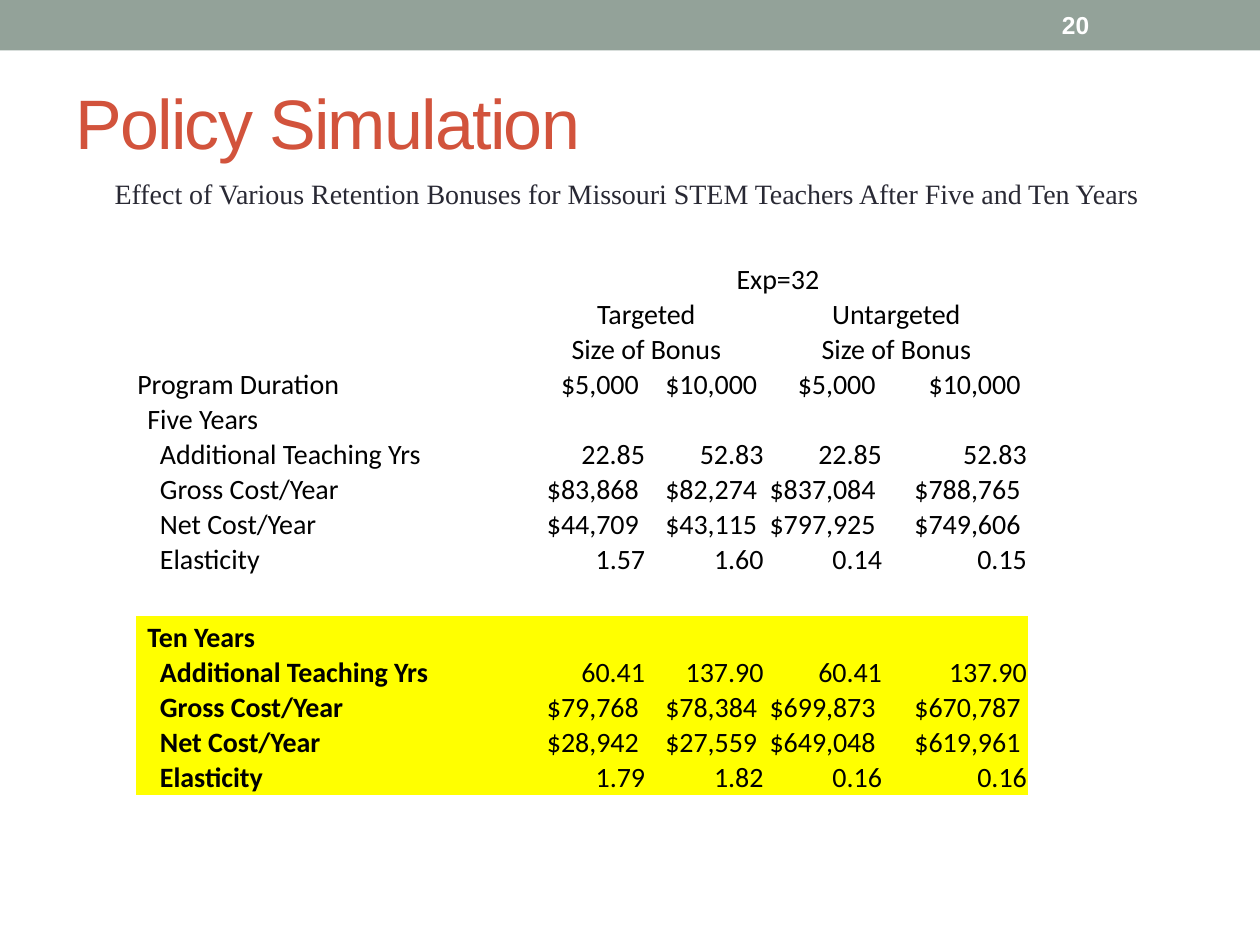
from pptx import Presentation
from pptx import util as u
from pptx.dml.color import RGBColor
from pptx.enum import shapes, text

COLUMN_WIDTHS = [2.86, 0.25, 0.94, 0.94, 0.94, 1.15]
ROW_HEIGHT = u.Pt(20)
TALL_ROW_HEIGHT = u.Inches(0.31)
NO_GRID_STYLE = "{2D5ABB26-0587-4C30-8999-92F81FD0307C}"
HIGHLIGHT = "FFFF00"

HEADINGS = [  # row, first column, last column, wording
    (0, 2, 5, "Exp=32"),
    (1, 2, 3, "Targeted"),
    (1, 4, 5, "Untargeted"),
    (2, 2, 3, "Size of Bonus"),
    (2, 4, 5, "Size of Bonus"),
]
BONUSES = ["$5,000 ", "$10,000 ", "$5,000 ", "$10,000 "]
MEASURES = ["Additional Teaching Yrs", "Gross Cost/Year", "Net Cost/Year", "Elasticity"]
FIVE_YEARS = [
    ["22.85", "52.83", "22.85", "52.83"],
    ["$83,868 ", "$82,274 ", "$837,084 ", "$788,765 "],
    ["$44,709 ", "$43,115 ", "$797,925 ", "$749,606 "],
    ["1.57", "1.60", "0.14", "0.15"],
]
TEN_YEARS = [
    ["60.41", "137.90", "60.41", "137.90"],
    ["$79,768 ", "$78,384 ", "$699,873 ", "$670,787 "],
    ["$28,942 ", "$27,559 ", "$649,048 ", "$619,961 "],
    ["1.79", "1.82", "0.16", "0.16"],
]
BONUS_ROW, FIVE_YEARS_ROW, GAP_ROW, TEN_YEARS_ROW, ROW_COUNT = 3, 4, 9, 10, 15


def color(value):
    return RGBColor.from_string(value)


def format_font(font, name, size, value, bold=False):
    font.name = name
    font.size = u.Pt(size)
    font.color.rgb = color(value)
    font.bold = bold


def add_band(slide):
    band = slide.shapes.add_shape(
        shapes.MSO_SHAPE.RECTANGLE, 0, 0, u.Inches(10), u.Inches(0.4))
    band.shadow.inherit = False
    band.fill.solid()
    band.fill.fore_color.rgb = color("93A299")
    band.line.fill.background()


def add_text(slide, box, wording, name, size, value, bold=False,
             anchor=text.MSO_ANCHOR.TOP, left_inset=0.1):
    shape = slide.shapes.add_textbox(*map(u.Inches, box))
    frame = shape.text_frame
    frame.word_wrap = True
    frame.vertical_anchor = anchor
    frame.margin_left = u.Inches(left_inset)
    frame.text = wording
    run = frame.paragraphs[0].runs[0]
    format_font(run.font, name, size, value, bold)
    return run


def write_cell(cell, wording, alignment, bold=False, indent=0.01):
    cell.margin_left = u.Inches(indent)
    cell.text_frame.text = wording
    paragraph = cell.text_frame.paragraphs[0]
    paragraph.alignment = alignment
    format_font(paragraph.runs[0].font, "Calibri", 16, "000000", bold)


def write_period(table, first_row, title, values, bold=False):
    """Write a period's title and, below it, one row for each measure."""
    left, right = text.PP_ALIGN.LEFT, text.PP_ALIGN.RIGHT
    write_cell(table.cell(first_row, 0), title, left, bold, 0.09)
    for row, (measure, amounts) in enumerate(zip(MEASURES, values), first_row + 1):
        write_cell(table.cell(row, 0), measure, left, bold, 0.19)
        write_amounts(table, row, amounts)


def write_amounts(table, row, amounts):
    for column, amount in enumerate(amounts, 2):
        write_cell(table.cell(row, column), amount, text.PP_ALIGN.RIGHT)


def prepare_cell(cell, highlighted):
    cell.vertical_anchor = text.MSO_ANCHOR.BOTTOM
    cell.margin_left = cell.margin_right = cell.margin_top = u.Inches(0.01)
    cell.margin_bottom = 0
    if highlighted:
        cell.fill.solid()
        cell.fill.fore_color.rgb = color(HIGHLIGHT)
    else:
        cell.fill.background()
    # An empty cell takes its line height from the end-of-paragraph size.
    end = cell.text_frame.paragraphs[0]._p.get_or_add_endParaRPr()
    end.set("sz", "1600")


def add_simulation_table(slide):
    frame = slide.shapes.add_table(
        ROW_COUNT, len(COLUMN_WIDTHS), u.Inches(1.08), u.Inches(2.08),
        u.Inches(sum(COLUMN_WIDTHS)), ROW_HEIGHT * ROW_COUNT)
    table = frame.table
    table.first_row = table.horz_banding = False
    table._tbl.tblPr[0].text = NO_GRID_STYLE
    for column, width in zip(table.columns, COLUMN_WIDTHS):
        column.width = u.Inches(width)
    for index, row in enumerate(table.rows):
        row.height = TALL_ROW_HEIGHT if index in (GAP_ROW, TEN_YEARS_ROW) else ROW_HEIGHT
        for cell in row.cells:
            prepare_cell(cell, index >= TEN_YEARS_ROW)

    for row, first, last, wording in HEADINGS:
        table.cell(row, first).merge(table.cell(row, last))
        write_cell(table.cell(row, first), wording, text.PP_ALIGN.CENTER)
    write_cell(table.cell(BONUS_ROW, 0), "Program Duration", text.PP_ALIGN.LEFT)
    write_amounts(table, BONUS_ROW, BONUSES)
    write_period(table, FIVE_YEARS_ROW, "Five Years", FIVE_YEARS)
    write_period(table, TEN_YEARS_ROW, "Ten Years", TEN_YEARS, bold=True)


def main():
    presentation = Presentation()
    presentation.slide_width = u.Inches(10)
    presentation.slide_height = u.Inches(7.5)
    slide = presentation.slides.add_slide(presentation.slide_layouts[6])

    add_band(slide)
    add_text(slide, (8.33, 0.02, 1.17, 0.36), "20", "Arial", 14, "FFFFFF",
             bold=True, anchor=text.MSO_ANCHOR.MIDDLE)
    title = add_text(slide, (0.5, 0.58, 9, 1.08), "Policy Simulation",
                     "Arial", 40, "D2533C")
    title.font._element.set("spc", "-100")
    add_simulation_table(slide)
    add_text(slide, (0.67, 1.35, 8.83, 0.64),
             "Effect of Various Retention Bonuses for Missouri STEM Teachers "
             "After Five and Ten Years",
             "Times New Roman", 16, "292934", left_inset=0.24)

    presentation.save("out.pptx")


if __name__ == "__main__":
    main()
